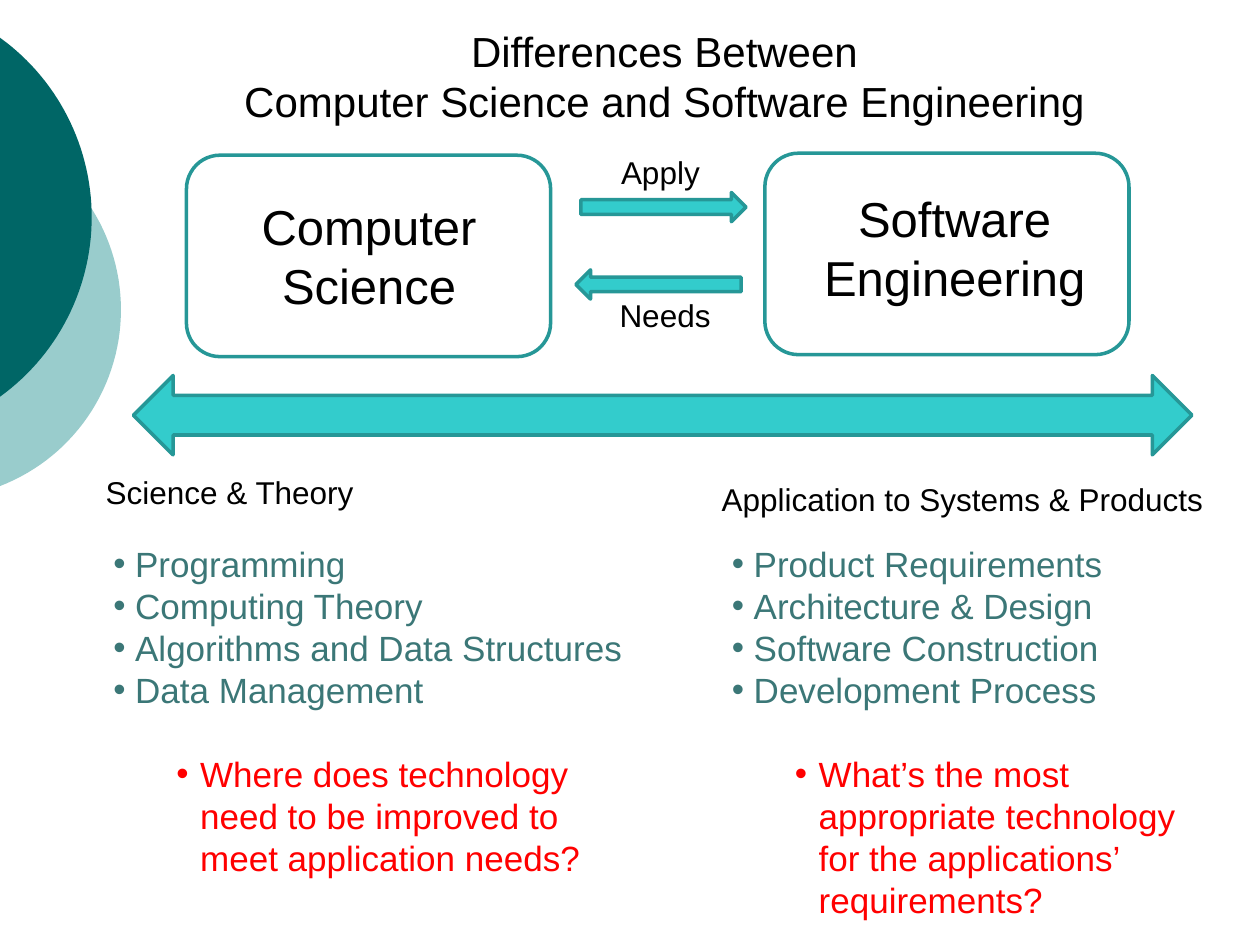
from math import asin, cos, sin

from lxml.etree import SubElement
from pptx import Presentation
from pptx.dml.color import RGBColor
from pptx.enum.shapes import MSO_SHAPE as Preset
from pptx.enum.text import MSO_ANCHOR as Anchor, MSO_AUTO_SIZE as AutoSize, PP_ALIGN as Align
from pptx.oxml.ns import qn
from pptx.util import Cm, Pt

BLACK = RGBColor(0x00, 0x00, 0x00)
RED = RGBColor(0xFF, 0x00, 0x00)
DARK_TEAL = RGBColor(0x00, 0x66, 0x66)
PALE_TEAL = RGBColor(0x99, 0xCC, 0xCC)
TURQUOISE = RGBColor(0x33, 0xCC, 0xCC)
OUTLINE = RGBColor(0x26, 0x97, 0x97)
LIST_TEAL = RGBColor(0x3B, 0x77, 0x77)


def write_text(shape, text, size, color=BLACK, align=Align.LEFT):
    """Fill a text shape, one paragraph per line, and return its paragraphs."""
    frame = shape.text_frame
    frame.text = text
    frame.word_wrap = True
    frame.auto_size = AutoSize.NONE
    frame.vertical_anchor = Anchor.TOP
    for paragraph in frame.paragraphs:
        paragraph.alignment = align
        paragraph.line_spacing = Pt(size * 1.2)
        paragraph.space_before = Pt(0)
        paragraph.font.name = "Arial"
        paragraph.font.size = Pt(size)
        paragraph.font.color.rgb = color
    return frame.paragraphs


def set_bullet(paragraph, margin, hanging):
    properties = paragraph._p.get_or_add_pPr()
    properties.set("marL", str(margin))
    properties.set("indent", str(-hanging))
    SubElement(properties, qn("a:buFont"), typeface="Arial")
    SubElement(properties, qn("a:buChar"), char="•")


presentation = Presentation()
presentation.slide_width = Cm(25.4)
presentation.slide_height = Cm(19.05)
slide = presentation.slides.add_slide(presentation.slide_layouts[3])
shapes = slide.shapes
title, left_body, right_body = slide.placeholders

# Circle segments along the left edge
ARC_STEPS = 60
for top, bottom, bulge, color in [
    (2.69, 9.8, 2.44, PALE_TEAL),
    (0.76, 8, 1.85, DARK_TEAL),
]:
    half = (bottom - top) / 2
    radius = (half**2 + bulge**2) / (2 * bulge)
    reach = asin(half / radius)
    angles = [reach * (2 * step / ARC_STEPS - 1) for step in range(ARC_STEPS + 1)]
    points = [
        (Cm(max(0, bulge - radius + radius * cos(angle))), Cm(top + half + radius * sin(angle)))
        for angle in angles
    ]
    builder = shapes.build_freeform(*points[0])
    builder.add_line_segments(points[1:], close=True)
    segment = builder.convert_to_shape()
    segment.shadow.inherit = False
    segment.fill.solid()
    segment.fill.fore_color.rgb = color
    segment.line.fill.background()

# Boxes and arrows
for preset, left, top, width, height, color in [
    (Preset.LEFT_RIGHT_ARROW, 2.69, 7.57, 21.34, 1.6, TURQUOISE),
    (Preset.ROUNDED_RECTANGLE, 3.76, 3.13, 7.34, 4.06, None),
    (Preset.ROUNDED_RECTANGLE, 15.42, 3.09, 7.34, 4.06, None),
    (Preset.RIGHT_ARROW, 11.71, 3.88, 3.33, 0.59, TURQUOISE),
    (Preset.LEFT_ARROW, 11.61, 5.44, 3.33, 0.59, TURQUOISE),
]:
    shape = shapes.add_shape(preset, Cm(left), Cm(top), Cm(width), Cm(height))
    shape.shadow.inherit = False
    shape.line.color.rgb = OUTLINE
    shape.line.width = Pt(2)
    if color is None:
        shape.fill.background()
    else:
        shape.fill.solid()
        shape.fill.fore_color.rgb = color

# Labels
for text, left, top, width, height, size, align in [
    ("Computer\nScience", 4.85, 3.84, 5.18, 2.64, 28, Align.CENTER),
    ("Software\nEngineering", 16.26, 3.68, 5.97, 2.64, 28, Align.CENTER),
    ("Apply", 12.27, 2.97, 2.24, 1.02, 18, Align.LEFT),
    ("Needs", 12.24, 5.84, 2.64, 1.02, 18, Align.LEFT),
    ("Science & Theory", 1.88, 9.42, 5.77, 1.02, 18, Align.LEFT),
    ("Application to Systems & Products", 14.3, 9.55, 10.6, 1.02, 18, Align.LEFT),
]:
    label = shapes.add_textbox(Cm(left), Cm(top), Cm(width), Cm(height))
    write_text(label, text, size, align=align)

# Title
title.left, title.top, title.width, title.height = Cm(4.11), Cm(0.38), Cm(18.57), Cm(2.31)
frame = title.text_frame
frame.margin_left = frame.margin_right = frame.margin_top = frame.margin_bottom = Cm(0.13)
write_text(
    title, "Differences Between\nComputer Science and Software Engineering", 24, align=Align.CENTER
)

# Topic lists, each closed by a question
for body, left, width, height, topics, question in [
    (
        left_body, 2.03, 11.15, 7.09,
        ["Programming", "Computing Theory", "Algorithms and Data Structures", "Data Management"],
        "Where does technology need to be improved to meet application needs?",
    ),
    (
        right_body, 14.5, 9.7, 7.95,
        ["Product Requirements", "Architecture & Design", "Software Construction",
         "Development Process"],
        "What’s the most appropriate technology for the applications’ requirements?",
    ),
]:
    body.left, body.top, body.width, body.height = Cm(left), Cm(10.8), Cm(width), Cm(height)
    *items, closing = write_text(body, "\n".join(topics + [question]), 20, LIST_TEAL)
    closing.font.color.rgb = RED
    closing.space_before = Pt(24)
    for item in items:
        set_bullet(item, Cm(0.44), Cm(0.44))
    set_bullet(closing, Cm(1.75), Cm(0.48))

presentation.save("out.pptx")
